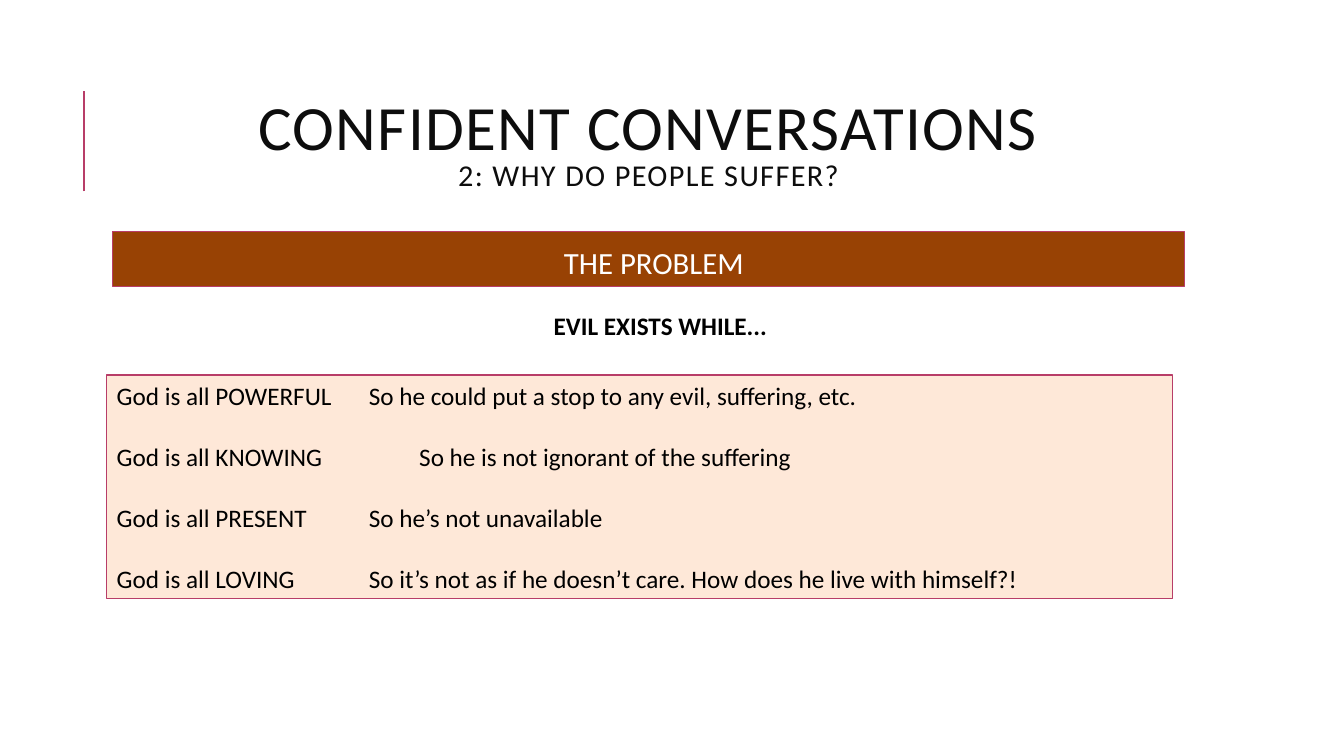
from collections import namedtuple
from dataclasses import dataclass

from lxml import etree
from pptx import Presentation, util as u
from pptx.dml.color import RGBColor
from pptx.enum import shapes, text
from pptx.oxml.ns import qn

Box = namedtuple("Box", "left top width height")


@dataclass(frozen=True)
class Theme:
    font: str = "Calibri"
    accent: str = "B83D68"
    heading: str = "0D0D0D"
    band: str = "984204"
    on_band: str = "FFFFFF"
    panel: str = "FEE8D8"
    body: str = "000000"
    title_size: float = 45
    subtitle_size: float = 21.6
    band_size: float = 22
    body_size: float = 18


THEME = Theme()
WIDTH, HEIGHT = u.Inches(13.33), u.Inches(7.5)

ATTRIBUTES = [
    ("God is all POWERFUL", "So he could put a stop to any evil, suffering, etc.", 2.5),
    ("God is all KNOWING", "So he is not ignorant of the suffering", 3),
    ("God is all PRESENT", "So he’s not unavailable", 2.5),
    ("God is all LOVING", "So it’s not as if he doesn’t care. How does he live with himself?!", 2.5),
]


def share(left, top, width, height):
    return Box(*(int(side * part / 100) for side, part in
                 zip((WIDTH, HEIGHT, WIDTH, HEIGHT), (left, top, width, height))))


def color(value):
    return RGBColor.from_string(value)


def style(run, size, ink, bold=False):
    run.font.name = THEME.font
    run.font.size = u.Pt(size)
    run.font.color.rgb = color(ink)
    run.font.bold = bold


def add_panel(slide, box, fill):
    panel = slide.shapes.add_shape(shapes.MSO_SHAPE.RECTANGLE, *box)
    panel.shadow.inherit = False
    panel.fill.solid()
    panel.fill.fore_color.rgb = color(fill)
    panel.line.color.rgb = color(THEME.accent)
    panel.line.width = u.Pt(0.75)
    panel.text_frame.word_wrap = True
    panel.text_frame.vertical_anchor = text.MSO_ANCHOR.TOP
    return panel.text_frame


def add_accent_rule(slide, box):
    rule = slide.shapes.add_connector(
        shapes.MSO_CONNECTOR.STRAIGHT, box.left, box.top + box.height, box.left, box.top)
    rule.line.color.rgb = color(THEME.accent)
    rule.line.width = u.Pt(1.5)
    etree.SubElement(rule._element.spPr, qn("a:effectLst"))


def add_title(slide, box, title, subtitle):
    frame = slide.shapes.add_textbox(*box).text_frame
    frame.word_wrap = True
    frame.vertical_anchor = text.MSO_ANCHOR.MIDDLE
    heading = frame.paragraphs[0]
    heading.text = f"{title}\v{subtitle}"
    heading.alignment = text.PP_ALIGN.CENTER
    heading.line_spacing = 0.8
    for run, size in zip(heading.runs, (THEME.title_size, THEME.subtitle_size)):
        style(run, size, THEME.heading)
        run.font._element.set("spc", "100")


def add_band(slide, box, label):
    frame = add_panel(slide, box, THEME.band)
    frame.margin_left = frame.margin_right = u.Inches(0.05)
    frame.margin_top = frame.margin_bottom = u.Inches(0.05)
    caption = frame.paragraphs[0]
    caption.text = label
    caption.alignment = text.PP_ALIGN.CENTER
    caption.line_spacing = 1.2
    caption.space_after = u.Pt(2)
    caption._p.get_or_add_pPr().set("marL", str(u.Inches(0.1)))
    style(caption.runs[0], THEME.band_size, THEME.on_band)


def add_lead_in(slide, box, label):
    frame = slide.shapes.add_textbox(*box).text_frame
    frame.word_wrap = False
    lead_in = frame.paragraphs[0]
    lead_in.text = label
    lead_in.alignment = text.PP_ALIGN.CENTER
    style(lead_in.runs[0], THEME.body_size, THEME.body, bold=True)


def add_attributes(slide, box, attributes):
    frame = add_panel(slide, box, THEME.panel)
    for index, (attribute, consequence, stop) in enumerate(attributes):
        row = frame.add_paragraph() if index else frame.paragraphs[0]
        row.text = f"{attribute}\t{consequence}"
        row.alignment = text.PP_ALIGN.LEFT
        row.space_before = u.Pt(22 if index else 0)
        tabs = etree.SubElement(row._p.get_or_add_pPr(), qn("a:tabLst"))
        etree.SubElement(tabs, qn("a:tab"), pos=str(u.Inches(stop)), algn="l")
        style(row.runs[0], THEME.body_size, THEME.body)


def build_problem_slide(deck):
    slide = deck.slides.add_slide(deck.slide_layouts[6])
    add_accent_rule(slide, share(6.25, 12, 0, 13.33))
    add_title(slide, share(8.4, 8.53, 79.75, 21.87),
              "CONFIDENT CONVERSATIONS", "2: WHY DO PEOPLE SUFFER?")
    add_band(slide, share(8.4, 30.67, 79.75, 7.2), "THE PROBLEM")
    add_lead_in(slide, share(38.56, 40.4, 21.16, 5.33), "EVIL EXISTS WHILE...")
    add_attributes(slide, share(7.95, 49.6, 79.3, 29.6), ATTRIBUTES)


def main():
    deck = Presentation()
    deck.slide_width, deck.slide_height = WIDTH, HEIGHT
    build_problem_slide(deck)
    deck.save("out.pptx")


if __name__ == "__main__":
    main()
